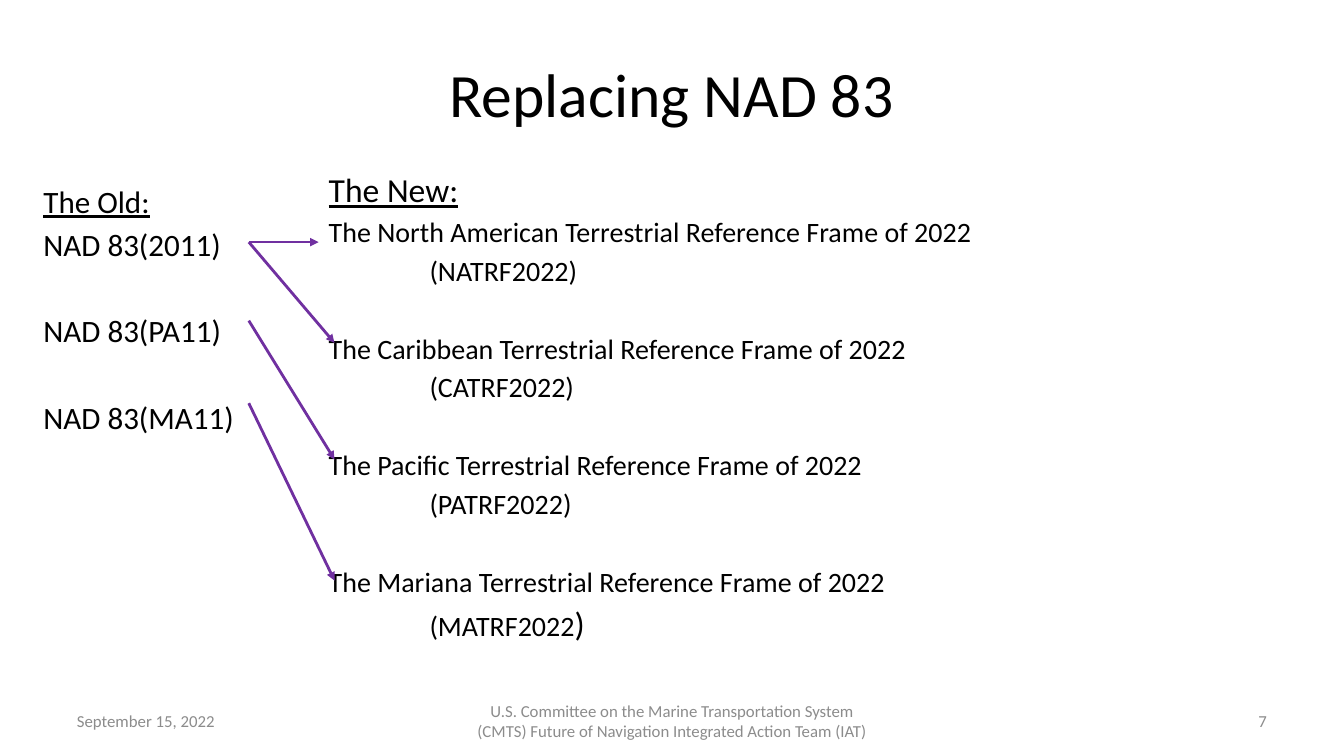
from dataclasses import dataclass

from lxml import etree
from pptx import Presentation
from pptx.dml.color import RGBColor
from pptx.enum import shapes, text
from pptx.oxml import ns
from pptx.util import Cm, Pt


@dataclass(frozen=True)
class Theme:
    face: str = "Calibri"
    ink: RGBColor = RGBColor(0, 0, 0)
    gray: RGBColor = RGBColor(0x8C, 0x8C, 0x8C)
    arrow: RGBColor = RGBColor(0x70, 0x30, 0xA0)
    title: float = 44
    head: float = 24
    new: float = 20
    old: float = 22.2
    foot: float = 12


theme = Theme()


def place(shape, left, top, width, height):
    shape.left, shape.top = Cm(left), Cm(top)
    shape.width, shape.height = Cm(width), Cm(height)


def style(para, size, color=theme.ink):
    font = para.font
    font.name, font.size = theme.face, Pt(size)
    font.color.rgb = color


deck = Presentation()
deck.slide_width, deck.slide_height = Cm(33.87), Cm(19.05)
slide = deck.slides.add_slide(deck.slide_layouts.get_by_name("Two Content"))
title, old, new = list(slide.placeholders)[:3]

# Title
place(title, 1.69, 0.76, 30.48, 3.18)
title.text_frame.text = "Replacing NAD 83"
title.text_frame.vertical_anchor = text.MSO_ANCHOR.MIDDLE
title.text_frame.paragraphs[0].alignment = text.PP_ALIGN.CENTER
style(title.text_frame.paragraphs[0], theme.title)

# Lists: each line holds its text, space before (pt) and left indent (cm)
olds = [("The Old:", 0, 0)]
for i, name in enumerate(("2011", "PA11", "MA11")):
    olds.append((f"NAD 83({name})", 35.1 if i else 4, 0))

news = [("The New:", 0, 0)]
for i, area in enumerate(("North American", "Caribbean", "Pacific", "Mariana")):
    code = "".join(word[0] for word in area.split())
    code = code if len(code) == 2 else area[:2].upper()
    news.append((f"The {area} Terrestrial Reference Frame of 2022",
                 31.6 if i else 3.6, 0))
    news.append((f"({code}TRF2022)", 3.6, 2.54))

lists = (
    (old, (0.84, 4.47, 7.59, 6.55), olds, theme.old, theme.old),
    (new, (8.03, 4.14, 17.58, 13.34), news, theme.head, theme.new),
)
for body, box, lines, head, size in lists:
    place(body, *box)
    frame = body.text_frame
    frame.auto_size = text.MSO_AUTO_SIZE.NONE
    for i, (words, gap, indent) in enumerate(lines):
        para = frame.paragraphs[0] if i == 0 else frame.add_paragraph()
        para.text = words
        para.space_before = Pt(gap)
        props = para._p.get_or_add_pPr()
        props.set("marL", str(Cm(indent)))
        props.set("indent", "0")
        etree.SubElement(props, ns.qn("a:buNone"))
        style(para, size if i else head)
        para.font.underline = i == 0

# The closing bracket of the last line is larger
last = new.text_frame.paragraphs[-1]
last.runs[0].text = last.runs[0].text[:-1]
end = last.add_run()
end.text = ")"
end.font.size = Pt(theme.head)

# Arrows from old frames to new ones: start y, end x, end y
start = 6.27
for top, right, low in ((6.1, 8.03, 6.1), (6.1, 8.43, 8.64),
                        (8.08, 8.43, 11.58), (10.16, 8.43, 14.63)):
    arrow = slide.shapes.add_connector(
        shapes.MSO_CONNECTOR.STRAIGHT, Cm(start), Cm(top), Cm(right), Cm(low))
    arrow.line.color.rgb = theme.arrow
    arrow.line.width = Pt(2)
    tail = etree.SubElement(arrow.line._get_or_add_ln(), ns.qn("a:tailEnd"))
    tail.set("type", "triangle")
    etree.SubElement(arrow._element.spPr, ns.qn("a:effectLst"))

# Footer
align = text.PP_ALIGN
footer = (
    ("September 15, 2022", 1.69, 7.9, align.LEFT),
    ("U.S. Committee on the Marine Transportation System (CMTS) "
     "Future of Navigation Integrated Action Team (IAT)",
     11.58, 10.72, align.CENTER),
    ("7", 24.28, 7.9, align.RIGHT),
)
for words, left, width, side in footer:
    note = slide.shapes.add_textbox(Cm(left), Cm(17.65), Cm(width), Cm(1.02))
    frame = note.text_frame
    frame.word_wrap = True
    frame.vertical_anchor = text.MSO_ANCHOR.MIDDLE
    frame.text = words
    frame.paragraphs[0].alignment = side
    style(frame.paragraphs[0], theme.foot, theme.gray)

deck.save("out.pptx")
